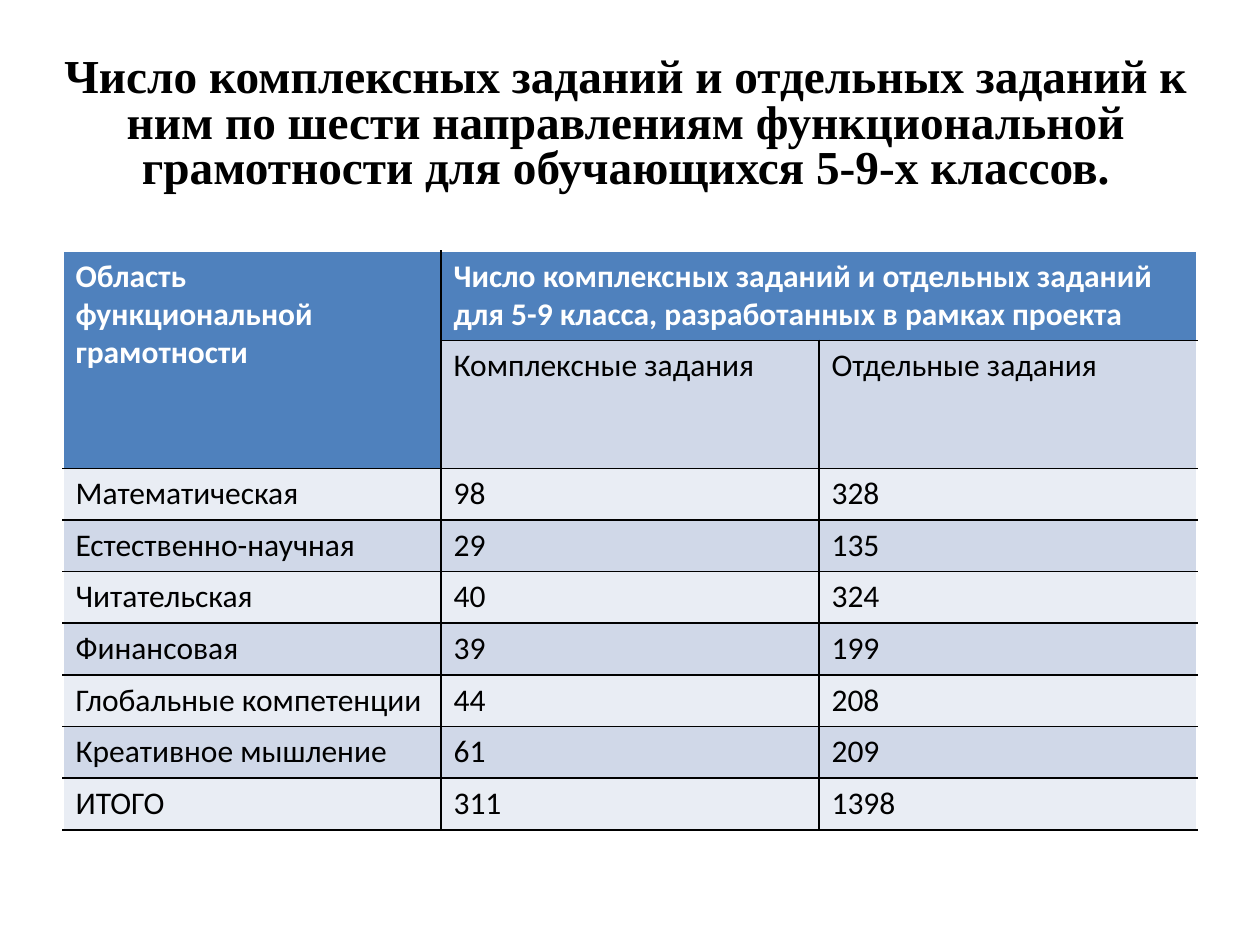
from lxml import etree
from pptx import Presentation
from pptx.dml.color import RGBColor
from pptx.enum.text import MSO_ANCHOR, MSO_AUTO_SIZE, PP_ALIGN
from pptx.oxml.ns import qn
from pptx.util import Inches, Pt

MIDDLE = MSO_ANCHOR.MIDDLE
SHRINK = MSO_AUTO_SIZE.TEXT_TO_FIT_SHAPE
CENTER = PP_ALIGN.CENTER
BLACK = RGBColor(0x00, 0x00, 0x00)
WHITE = RGBColor(0xFF, 0xFF, 0xFF)
HEADER_BLUE = RGBColor(0x4F, 0x81, 0xBD)
BAND_DARK = RGBColor(0xD0, 0xD8, 0xE8)
BAND_LIGHT = RGBColor(0xE9, 0xED, 0xF4)

ROWS = [
    ("Область функциональной грамотности",
     "Число комплексных заданий и отдельных заданий для 5-9 класса, разработанных в рамках проекта", ""),
    ("", "Комплексные задания", "Отдельные задания"),
    ("Математическая", "98", "328"),
    ("Естественно-научная", "29", "135"),
    ("Читательская", "40", "324"),
    ("Финансовая", "39", "199"),
    ("Глобальные компетенции", "44", "208"),
    ("Креативное мышление", "61", "209"),
    ("ИТОГО", "311", "1398"),
]


def set_border(cell, side, color):
    line = etree.SubElement(cell._tc.get_or_add_tcPr(), qn(f"a:{side}"), w=str(Pt(1)))
    fill = etree.SubElement(line, qn("a:solidFill"))
    etree.SubElement(fill, qn("a:srgbClr"), val=str(color))


presentation = Presentation()
presentation.slide_width = Inches(10)
presentation.slide_height = Inches(7.5)
slide = presentation.slides.add_slide(presentation.slide_layouts[5])

title = slide.shapes.title
title.left, title.top = Inches(0.12), Inches(0.3)
title.width, title.height = Inches(9.69), Inches(1.25)
title_frame = title.text_frame
title_frame.text = (
    "Число комплексных заданий и отдельных заданий к ним по шести направлениям "
    "функциональной грамотности для обучающихся 5-9-х классов."
)
title_frame.vertical_anchor = MIDDLE
title_frame.auto_size = SHRINK
title_frame._txBody.bodyPr.find(qn("a:normAutofit")).set("fontScale", "90000")
title_frame.paragraphs[0].alignment = CENTER
title_font = title_frame.paragraphs[0].runs[0].font
title_font.name = "Times New Roman"
title_font.size = Pt(32)
title_font.bold = True
title_font.color.rgb = BLACK

row_height = Inches(0.41)
table = slide.shapes.add_table(
    len(ROWS), 3, Inches(0.5), Inches(1.99), Inches(9), row_height * len(ROWS)
).table
for row in table.rows:
    row.height = row_height
for column in table.columns:
    column.width = Inches(3)
table.cell(0, 0).merge(table.cell(1, 0))
table.cell(0, 1).merge(table.cell(0, 2))

for row_index, values in enumerate(ROWS):
    for column_index, value in enumerate(values):
        cell = table.cell(row_index, column_index)
        is_header = row_index == 0 or (row_index == 1 and column_index == 0)
        set_border(cell, "lnL", WHITE if column_index == 0 else BLACK)
        set_border(cell, "lnR", WHITE if column_index == 2 or (row_index == 0 and column_index == 1) else BLACK)
        set_border(cell, "lnT", WHITE if row_index == 0 else BLACK)
        set_border(cell, "lnB", BLACK)
        cell.fill.solid()
        if is_header:
            cell.fill.fore_color.rgb = HEADER_BLUE
        else:
            cell.fill.fore_color.rgb = BAND_DARK if row_index % 2 else BAND_LIGHT
        if cell.is_spanned:
            continue
        cell.text_frame.text = value
        font = cell.text_frame.paragraphs[0].runs[0].font
        font.name = "Calibri"
        font.size = Pt(18)
        font.bold = is_header
        font.color.rgb = WHITE if is_header else BLACK

presentation.save("out.pptx")
